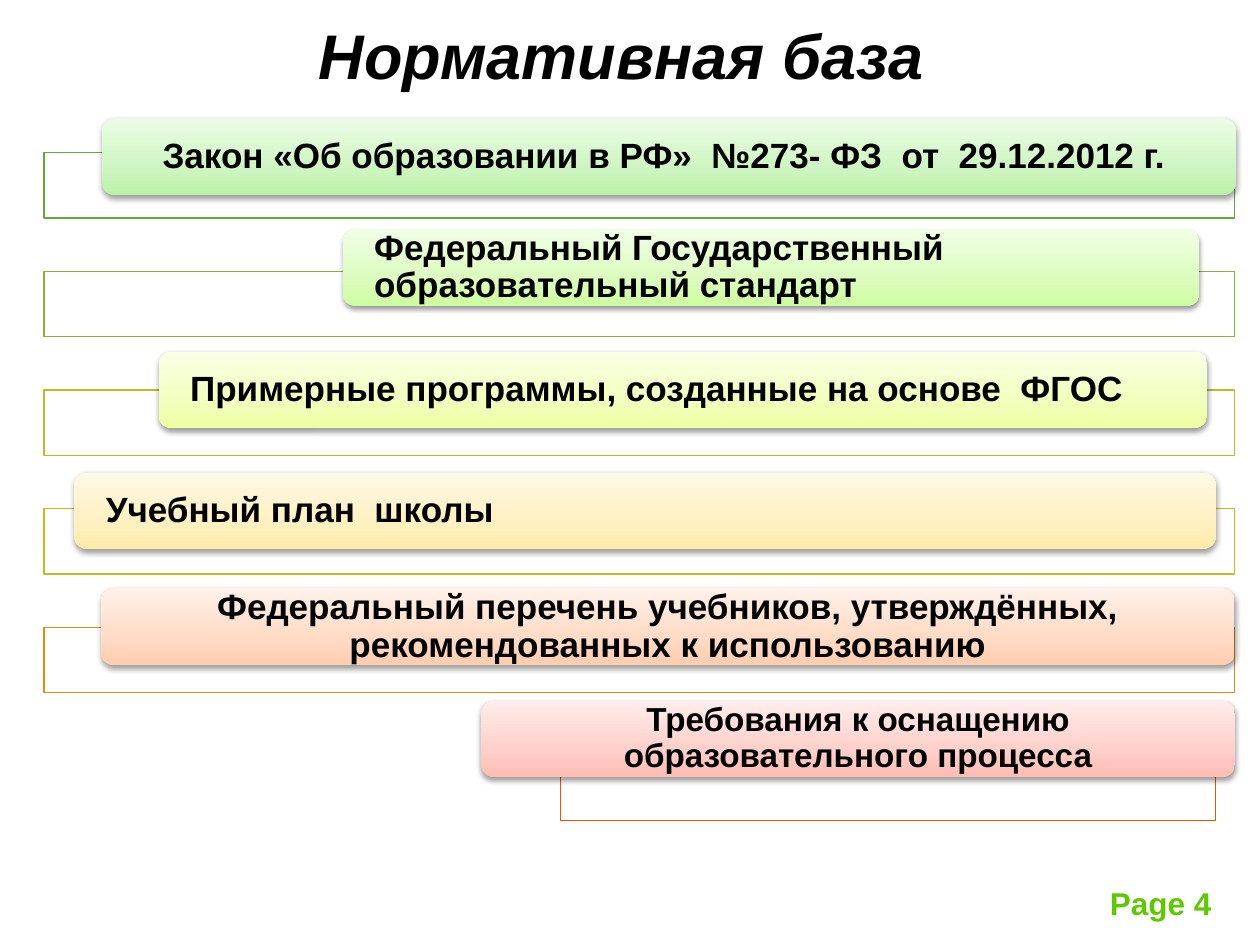
from copy import deepcopy

from lxml.etree import SubElement
from pptx import Presentation
from pptx.dml.color import RGBColor
from pptx.enum.shapes import MSO_SHAPE
from pptx.enum.text import MSO_ANCHOR, PP_ALIGN
from pptx.oxml import parse_xml
from pptx.oxml.ns import nsdecls, qn
from pptx.util import Inches, Pt

BLACK = RGBColor(0x00, 0x00, 0x00)
WHITE = RGBColor(0xFF, 0xFF, 0xFF)
PAGE_GREEN = RGBColor(0x5E, 0xC9, 0x02)

FRAME_LEFT, FRAME_WIDTH, FRAME_HEIGHT = 0.35, 9.45, 0.52
FRAME_TOP, ROW_PITCH = 1.21, 0.942
CARD_HEIGHT = 0.61
STOP_POSITIONS = (0, 0.35, 1)

SHADOW = (
    f'<a:effectLst {nsdecls("a")}>'
    '<a:outerShdw blurRad="39370" dist="20320" dir="5400000" rotWithShape="0">'
    '<a:srgbClr val="000000"><a:alpha val="38000"/></a:srgbClr>'
    '</a:outerShdw></a:effectLst>'
)

LEFT, CENTER = PP_ALIGN.LEFT, PP_ALIGN.CENTER
documents = [
    ("Закон «Об образовании в РФ»  №273- ФЗ  от  29.12.2012 г. ", 0.81, 0.94, 9,
     CENTER, 20, "64A73B", ("B9F2A6", "CEF5C1", "ECFCE7")),
    ("Федеральный Государственный образовательный стандарт", 2.72, 1.82, 6.8,
     LEFT, 20, "84B431", ("CDFD9F", "DBFCBD", "F1FFE5")),
    ("Примерные программы, созданные на основе  ФГОС", 1.26, 2.79, 8.32,
     LEFT, 20, "B0C126", ("EEFFA2", "F2FFBD", "FAFFE6")),
    ("Учебный план  школы", 0.59, 3.75, 9.06,
     LEFT, 20, "CFB61B", ("FFEAA7", "FFF0C1", "FFF9E7")),
    ("Федеральный перечень учебников, утверждённых, рекомендованных к использованию",
     0.8, 4.67, 9, CENTER, 20, "DD8C10", ("FFCCAD", "FFDBC5", "FFF1E9")),
    ("Требования к оснащению образовательного процесса", 3.82, 5.56, 5.98,
     CENTER, 19, "EB5605", ("FFBCB3", "FFCFC9", "FFEDEB")),
]


def write_text(shape, text, size=20, color=BLACK, italic=False, align=LEFT,
               anchor=MSO_ANCHOR.MIDDLE, inset=(0.1, 0.05), spacing=1.0, wrap=True):
    frame = shape.text_frame
    frame.word_wrap = wrap
    frame.vertical_anchor = anchor
    frame.margin_left = frame.margin_right = Inches(inset[0])
    frame.margin_top = frame.margin_bottom = Inches(inset[1])
    paragraph = frame.paragraphs[0]
    paragraph.alignment = align
    paragraph.line_spacing = spacing
    run = paragraph.add_run()
    run.text = text
    run.font.name = "Arial"
    run.font.size = Pt(size)
    run.font.bold = True
    run.font.italic = italic
    run.font.color.rgb = color


def add_box(slide, kind, left, top, width, height):
    shape = slide.shapes.add_shape(
        kind, Inches(left), Inches(top), Inches(width), Inches(height))
    shape.shadow.inherit = False
    return shape


presentation = Presentation()
presentation.slide_width = Inches(10)
presentation.slide_height = Inches(7.5)
slide = presentation.slides.add_slide(presentation.slide_layouts[5])

title = slide.shapes.title
title.left, title.top = Inches(0.68), Inches(0.02)
title.width, title.height = Inches(8.5), Inches(0.82)
write_text(title, "Нормативная база", size=36, italic=True, align=CENTER)

for row, (text, left, top, width, align, size, line, stops) in enumerate(documents):
    if row < len(documents) - 1:
        frame_box = (FRAME_LEFT, FRAME_TOP + row * ROW_PITCH, FRAME_WIDTH, FRAME_HEIGHT)
    else:
        frame_box = (4.45, 5.99, 5.2, FRAME_HEIGHT)
    frame = add_box(slide, MSO_SHAPE.RECTANGLE, *frame_box)
    frame.fill.solid()
    frame.fill.fore_color.rgb = WHITE
    frame_color = frame._element.spPr.find(qn("a:solidFill")).find(qn("a:srgbClr"))
    SubElement(frame_color, qn("a:alpha")).set("val", "90000")
    frame.line.color.rgb = RGBColor.from_string(line)
    frame.line.width = Pt(0.75)

    card = add_box(slide, MSO_SHAPE.ROUNDED_RECTANGLE, left, top, width, CARD_HEIGHT)
    card.line.fill.background()
    card.fill.gradient()
    card.fill.gradient_angle = 90
    properties = card._element.spPr
    stop_list = properties.find(qn("a:gradFill")).find(qn("a:gsLst"))
    stop_list.append(deepcopy(stop_list[-1]))
    for stop, position, color in zip(card.fill.gradient_stops, STOP_POSITIONS, stops):
        stop.position = position
        stop.color.rgb = RGBColor.from_string(color)
    properties.replace(properties.find(qn("a:effectLst")), parse_xml(SHADOW))
    write_text(card, text, size=size, align=align, inset=(0.22, 0), spacing=0.9)

page_label = slide.shapes.add_textbox(
    Inches(8.71), Inches(6.97), Inches(1.17), Inches(0.4))
write_text(page_label, "Page 4", size=18, color=PAGE_GREEN,
           anchor=MSO_ANCHOR.TOP, wrap=False)

presentation.save("out.pptx")
